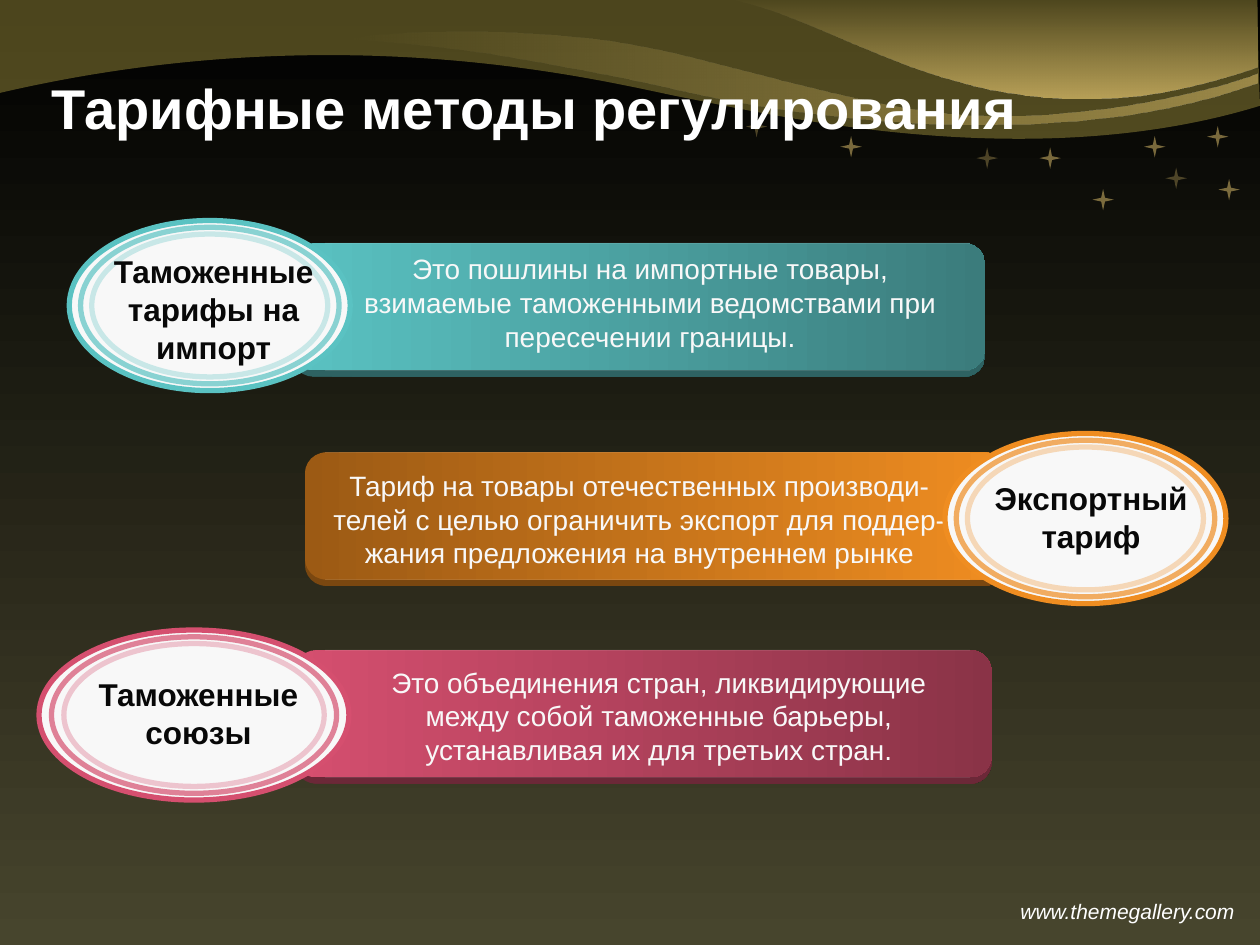
import pptx
import pptx.dml.color
import pptx.enum.shapes
import pptx.enum.text
import pptx.util
from lxml import etree
from pptx.dml.color import RGBColor
from pptx.util import Inches

WHITE = RGBColor(0xFF, 0xFF, 0xFF)
PALE = RGBColor(0xF8, 0xF8, 0xF8)
INK = RGBColor(0x08, 0x08, 0x08)
BLACK = RGBColor(0x00, 0x00, 0x00)
OLIVE = RGBColor(0x47, 0x45, 0x2D)
MOSS = RGBColor(0x98, 0x8B, 0x3A)
GOLD = RGBColor(0xE8, 0xC9, 0x72)
TEAL = RGBColor(0x5A, 0xC2, 0xC2)
DARK_TEAL = RGBColor(0x3B, 0x7C, 0x7C)
TEAL_EDGE = RGBColor(0x2E, 0x62, 0x62)
ORANGE = RGBColor(0xEF, 0x8D, 0x21)
DARK_ORANGE = RGBColor(0x9C, 0x5A, 0x14)
ORANGE_EDGE = RGBColor(0x7A, 0x47, 0x10)
PINK = RGBColor(0xD5, 0x4F, 0x6F)
DARK_PINK = RGBColor(0x8A, 0x33, 0x47)
PINK_EDGE = RGBColor(0x6C, 0x28, 0x38)

SHAPE = pptx.enum.shapes.MSO_SHAPE
ANCHOR = pptx.enum.text.MSO_ANCHOR
ALIGN = pptx.enum.text.PP_ALIGN
DRAWING = "{http://schemas.openxmlformats.org/drawingml/2006/main}"


def fade(element, *opacities):
    """Give the colours inside an element their opacity in percent, in order."""
    for color, opacity in zip(element.iter(DRAWING + "srgbClr"), opacities):
        etree.SubElement(color, DRAWING + "alpha", val=str(opacity * 1000))


def set_gradient(fill, first, last, angle):
    fill.gradient()
    fill.gradient_angle = angle
    for stop, color in zip(fill.gradient_stops, (first, last)):
        stop.color.rgb = color


def drop_edge(shape, color):
    """Show a sharp dark edge below a shape."""
    effects = shape.element.spPr.find(DRAWING + "effectLst")
    edge = etree.SubElement(effects, DRAWING + "outerShdw", blurRad="0",
                            dist=str(Inches(0.05)), dir="5400000",
                            algn="ctr", rotWithShape="0")
    etree.SubElement(edge, DRAWING + "srgbClr", val=str(color))


def bend(shape):
    """Turn each three line segments of a freeform into one cubic curve."""
    segments = list(shape.element.iter(DRAWING + "lnTo"))
    for first in range(0, len(segments), 3):
        curve = etree.Element(DRAWING + "cubicBezTo")
        segments[first].addprevious(curve)
        for segment in segments[first:first + 3]:
            curve.append(segment[0])
            segment.getparent().remove(segment)


class SlideArtist:
    font = "Arial"

    def __init__(self, page):
        self.page = page

    def shape(self, shapes, kind, left, top, width, height, fill=None):
        shape = shapes.add_shape(
            kind, Inches(left), Inches(top), Inches(width), Inches(height))
        shape.shadow.inherit = False
        shape.line.fill.background()
        if fill is None:
            shape.fill.background()
        else:
            shape.fill.solid()
            shape.fill.fore_color.rgb = fill
        return shape

    def wave(self, start, curves):
        """Draw a closed outline of curves, each given as x1, y1, x2, y2, x, y."""
        builder = self.page.shapes.build_freeform(Inches(start[0]), Inches(start[1]))
        builder.add_line_segments(
            [(Inches(curve[i]), Inches(curve[i + 1])) for curve in curves for i in (0, 2, 4)],
            close=True)
        wave = builder.convert_to_shape()
        bend(wave)
        wave.shadow.inherit = False
        wave.line.fill.background()
        return wave

    def star(self, left, top, opacity):
        star = self.shape(
            self.page.shapes, SHAPE.STAR_4_POINT, left, top, 0.17, 0.17, GOLD)
        star.adjustments[0] = 0.125
        fade(star.element, opacity)

    def text(self, left, top, width, height, words, size, color, bold=False,
             italic=False, align=ALIGN.CENTER, anchor=ANCHOR.TOP, wrap=True):
        box = self.page.shapes.add_textbox(
            Inches(left), Inches(top), Inches(width), Inches(height))
        box.text_frame.word_wrap = wrap
        box.text_frame.vertical_anchor = anchor
        para = box.text_frame.paragraphs[0]
        para.text = words
        para.alignment = align
        para.font.name = self.font
        para.font.size = pptx.util.Pt(size)
        para.font.bold = bold
        para.font.italic = italic
        para.font.color.rgb = color

    def highlight(self, shapes, left, top, opacity):
        line = shapes.add_connector(
            pptx.enum.shapes.MSO_CONNECTOR.STRAIGHT,
            Inches(left), Inches(top), Inches(left + 5.12), Inches(top))
        line.line.width = pptx.util.Pt(0.25)
        line.line.color.rgb = WHITE
        etree.SubElement(line.element.spPr, DRAWING + "effectLst")
        fade(line.element, opacity)

    def bar(self, left, top, width, first, last, edge, shine):
        """Draw a gradient bar with a dark lower edge and two fine highlights."""
        shapes = self.page.shapes.add_group_shape().shapes
        height = 1.01
        bar = self.shape(shapes, SHAPE.ROUNDED_RECTANGLE, left, top, width, height)
        set_gradient(bar.fill, first, last, 0)
        drop_edge(bar, edge)
        self.highlight(shapes, 2.58, top + height, 15)
        self.highlight(shapes, 2.58, top, shine)

    def oval(self, left, top, width, color):
        """Draw three nested rings, each fainter than the one around it."""
        shapes = self.page.shapes.add_group_shape().shapes
        height = 1.35
        for ring, opacity in enumerate((100, 70, 30)):
            inset = 0.04 * ring
            oval = self.shape(
                shapes, SHAPE.OVAL, left + inset * width, top + inset * height,
                width * (1 - 2 * inset), height * (1 - 2 * inset),
                None if ring else PALE)
            oval.line.width = pptx.util.Pt(3)
            oval.line.color.rgb = color
            if ring:
                fade(oval.element, opacity)


def draw_backdrop(artist):
    set_gradient(artist.page.background.fill, BLACK, OLIVE, 270)
    band = artist.wave((-0.01, 0.74), [
        (2.69, 0.11, 4.76, 0.64, 5.4, 0.77), (6.04, 0.89, 8.15, 1.41, 10, 0.84),
        (10, 0.84, 9.98, 0.33, 9.98, -0.01), (4.97, -0.01, -0.01, -0.02, -0.01, -0.02),
        (-0.01, 0.25, -0.01, 0.47, -0.01, 0.74)])
    band.fill.solid()
    band.fill.fore_color.rgb = MOSS
    fade(band.element, 50)
    ribbon = artist.wave((3.9, 0.43), [
        (4.68, 0.56, 5.08, 0.64, 5.41, 0.72), (5.73, 0.79, 8.16, 1.32, 9.98, 0.66),
        (9.98, 0.66, 9.98, 0.68, 9.98, 0.58), (9.61, 0.73, 8.55, 0.96, 7.68, 0.91),
        (6.81, 0.87, 5.58, 0.42, 4.76, 0.32), (3.93, 0.22, 3.19, 0.25, 2.73, 0.31),
        (2.74, 0.32, 3.19, 0.33, 3.9, 0.43)])
    set_gradient(ribbon.fill, GOLD, GOLD, 0)
    fade(ribbon.element, 0, 50)
    corner = artist.wave((9.98, -0.01), [
        (9.98, 0.26, 9.98, 0.53, 9.98, 0.53), (7.88, 1.27, 6.78, 0.18, 5.77, -0.01),
        (5.77, -0.01, 7.88, -0.01, 9.98, -0.01)])
    set_gradient(corner.fill, GOLD, GOLD, 270)
    fade(corner.element, 0, 70)
    artist.text(8, 7.08, 1.92, 0.3, "www.themegallery.com", 12, WHITE,
                italic=True, align=ALIGN.LEFT, wrap=False)
    for star in [(8.67, 1.5, 50), (5.92, 0.92, 30), (9.25, 1.33, 30),
                 (8.25, 1.17, 50), (6.67, 1.08, 50), (9.67, 1.42, 50),
                 (9.58, 1, 50), (9.08, 1.08, 50), (7.75, 1.17, 30)]:
        artist.star(*star)


# Each row: bar, its text box and words, oval, its label box and words.
ROWS = [
    ((2.34, 5.16, 5.53, PINK, DARK_PINK, PINK_EDGE, 25), (2.73, 5.23, 5, 0.91),
     "Это объединения стран, ликвидирующие между собой таможенные барьеры, "
     "устанавливая их для третьих стран.",
     (0.31, 5, 2.46, PINK), (0.47, 5.31, 2.21, 0.71), "Таможенные союзы"),
    ((2.42, 3.59, 5.56, DARK_ORANGE, ORANGE, ORANGE_EDGE, 15), (2.42, 3.67, 5.31, 0.91),
     "Тариф на товары отечественных производи-телей с целью ограничить "
     "экспорт для поддер-жания предложения на внутреннем рынке",
     (7.5, 3.44, 2.23, ORANGE), (7.66, 3.75, 2, 0.71), "Экспортный тариф"),
    ((2.32, 1.93, 5.5, TEAL, DARK_TEAL, TEAL_EDGE, 25), (2.66, 1.95, 5, 0.91),
     "Это пошлины на импортные товары, взимаемые таможенными ведомствами "
     "при пересечении границы.",
     (0.55, 1.75, 2.23, TEAL), (0.7, 1.95, 1.99, 1.01), "Таможенные тарифы на импорт"),
]


def main():
    deck = pptx.Presentation()
    deck.slide_width, deck.slide_height = Inches(10), Inches(7.5)
    artist = SlideArtist(deck.slides.add_slide(deck.slide_layouts[6]))
    draw_backdrop(artist)
    artist.text(0.31, 0.31, 8.02, 1.08, "Тарифные методы регулирования", 32, WHITE,
                bold=True, align=ALIGN.LEFT, anchor=ANCHOR.MIDDLE)
    for bar, text_box, words, oval, label_box, label in ROWS:
        artist.bar(*bar)
        artist.text(*text_box, words, 16, PALE)
        artist.oval(*oval)
        artist.text(*label_box, label, 18, INK, bold=True)
    deck.save("out.pptx")


if __name__ == "__main__":
    main()
